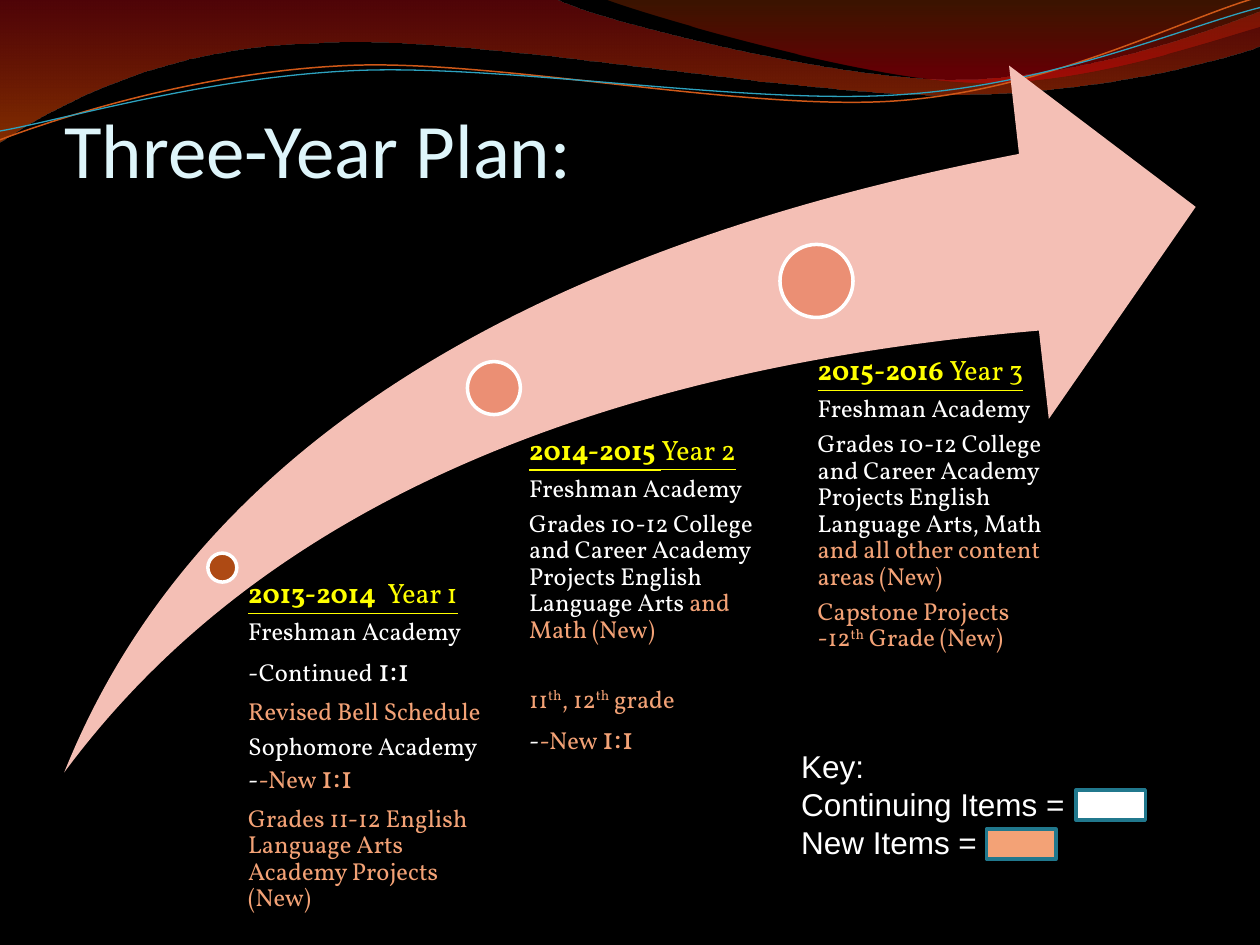
from pptx import Presentation
from pptx.dml.color import RGBColor
from pptx.enum.shapes import MSO_SHAPE as Shape
from pptx.enum.text import MSO_ANCHOR as Anchor, MSO_AUTO_SIZE as AutoSize, PP_ALIGN as Align
from pptx.oxml.ns import qn
from pptx.util import Inches, Pt
from lxml import etree

WHITE, YELLOW, ORANGE = "FFFFFF", "FFFF00", "F3A276"
NEW = {"color": ORANGE}
NEW_SUPER = {"color": ORANGE, "super": True}
NEW_RATIO = [("-New ", NEW), ("1:1", {"color": ORANGE, "size": 18})]

# Each outline: a start point, then Bézier segments (three points) or lines (one point).
LEFT_BAND = [(0, 0), [(4.4, -0.01)],
             [(4.76, 0.17), (6.64, 0.63), (7.58, 0.63)],
             [(8.53, 0.63), (9.58, 0.26), (10, 0.09)], [(10.01, 0.36)],
             [(9.83, 0.44), (8.7, 0.76), (7.46, 0.75)],
             [(6.22, 0.75), (3.82, 0.28), (2.57, 0.34)],
             [(1.29, 0.36), (0.46, 0.83), (-0.01, 1.13)], [(0, 0)]]
RIGHT_BAND = [(4.79, -0.01), [(5.09, 0.11), (6.82, 0.62), (7.69, 0.65)],
              [(8.56, 0.69), (9.61, 0.32), (10, 0.21)], [(10, 0)], [(4.79, -0.01)]]
ORANGE_WAVE = [(0, 1.11), [(0.48, 0.93), (1.58, 0.57), (2.77, 0.52)],
               [(3.95, 0.47), (5.93, 0.89), (7.13, 0.8)],
               [(8.33, 0.71), (9.38, 0.15), (9.98, -0.02)]]
BLUE_WAVE = [(0, 1.04), [(0.47, 0.96), (1.64, 0.61), (2.83, 0.56)],
             [(4.03, 0.51), (5.97, 0.84), (7.17, 0.75)],
             [(8.36, 0.67), (9.41, 0.21), (10, 0.06)]]

# Each year: box, left and top inset, years, label, paragraphs of runs.
YEARS = [
    ((1.85, 4.3, 2.09, 3.07), (0.12, 0.3), "2013-2014  ", "Year 1", [
        [("Freshman Academy", {})],
        [("-Continued ", {}), ("1:1", {"size": 18})],
        [("Revised Bell Schedule", NEW)],
        [("Sophomore Academy -", {}), *NEW_RATIO],
        [("Grades 11-12 English Language Arts Academy Projects (New)", NEW)]]),
    ((3.98, 2.88, 2.15, 3.72), (0.22, 0.58), "2014-2015 ", "Year 2", [
        [("Freshman Academy", {})],
        [("Grades 10-12 College and Career Academy Projects English Language Arts ", {}),
         ("and Math (New)", NEW)],
        [("11", {**NEW, "before": 20}), ("th", NEW_SUPER), (", 12", NEW),
         ("th", NEW_SUPER), (" grade", NEW)],
        [("-", {}), *NEW_RATIO]]),
    ((6.18, 2.25, 2.15, 3.9), (0.31, 0.58), "2015-2016 ", "Year 3", [
        [("Freshman Academy", {})],
        [("Grades 10-12 College and Career Academy Projects English Language Arts, Math ", {}),
         ("and all other content areas (New)", NEW)],
        [("Capstone Projects -12", NEW), ("th", NEW_SUPER), (" Grade (New)", NEW)]]),
]


def rgb(value):
    return RGBColor.from_string(value)


def add_outline(slide, outline):
    """Build straight segments through all points, then bend each triple into a curve."""
    start, *segments = outline
    points = [(Inches(x), Inches(y)) for segment in segments for x, y in segment]
    builder = slide.shapes.build_freeform(*map(Inches, start))
    builder.add_line_segments(points, close=start == segments[-1][-1])
    shape = builder.convert_to_shape()
    shape.shadow.inherit = False
    lines = iter(list(shape._element.iter(qn("a:lnTo"))))
    for segment in segments:
        parts = [next(lines) for _ in segment]
        if len(parts) == 3:
            curve = etree.Element(qn("a:cubicBezTo"))
            parts[0].addprevious(curve)
            for part in parts:
                curve.append(part[0])
                part.getparent().remove(part)
    return shape


def add_band(slide, outline, stops):
    """A closed area with a top-to-bottom gradient of (position, colour, opacity %)."""
    band = add_outline(slide, outline)
    band.line.fill.background()
    band.fill.gradient()
    band.fill.gradient_angle = 270
    for stop, (position, color, _) in zip(band.fill.gradient_stops, stops):
        stop.position = position
        stop.color.rgb = rgb(color)
    colors = band._element.spPr.iter(qn("a:srgbClr"))
    for element, (_, _, opacity) in zip(colors, stops):
        etree.SubElement(element, qn("a:alpha"), val=str(opacity * 1000))


def add_wave(slide, outline, color, width):
    wave = add_outline(slide, outline)
    wave.fill.background()
    wave.line.color.rgb = rgb(color)
    wave.line.width = Pt(width)


def add_shape(slide, kind, box, fill, line=None):
    shape = slide.shapes.add_shape(kind, *map(Inches, box))
    shape.shadow.inherit = False
    shape.fill.solid()
    shape.fill.fore_color.rgb = rgb(fill)
    if line:
        shape.line.color.rgb = rgb(line)
        shape.line.width = Pt(2)
    else:
        shape.line.fill.background()
    return shape


def add_text_frame(slide, box):
    frame = slide.shapes.add_textbox(*map(Inches, box)).text_frame
    frame.word_wrap = True
    return frame


def fill_paragraph(para, runs):
    para.font.name = "Vollkorn"
    para.line_spacing = 0.9
    largest = max(style.get("size", 14) for _, style in runs)
    para.space_after = Pt(round(0.35 * largest, 1))
    para.space_before = Pt(runs[0][1].get("before", 0))
    for text, style in runs:
        span = para.add_run()
        span.text = text
        font = span.font
        font.name = "Vollkorn"
        font.size = Pt(style.get("size", 14))
        font.color.rgb = rgb(style.get("color", WHITE))
        font.bold = style.get("bold", False)
        font.underline = style.get("underline", False)
        if style.get("super"):
            font._element.set("baseline", "30000")


def add_year(slide, box, insets, years, label, items):
    frame = add_text_frame(slide, box)
    frame.margin_left, frame.margin_top = map(Inches, insets)
    frame.margin_right = frame.margin_bottom = 0
    heading = {"size": 16, "color": YELLOW, "underline": True}
    fill_paragraph(frame.paragraphs[0], [(years, {**heading, "bold": True}), (label, heading)])
    for runs in items:
        fill_paragraph(frame.add_paragraph(), runs)


def set_title(slide, text):
    title = slide.shapes.title
    title.left, title.top, title.width, title.height = map(Inches, (0.51, 0.29, 9.08, 1.25))
    frame = title.text_frame
    frame.text = text
    frame.auto_size = AutoSize.NONE
    frame.vertical_anchor = Anchor.BOTTOM
    frame.margin_left = frame.margin_right = frame.margin_bottom = 0
    para = frame.paragraphs[0]
    para.alignment = Align.LEFT
    para.font.name = "Calibri"
    para.font.size = Pt(44)
    para.font.color.rgb = rgb("DEF5FA")


def add_key(slide):
    frame = add_text_frame(slide, (6.26, 5.88, 3.54, 1.01))
    frame.text = "Key:\nContinuing Items =\nNew Items ="
    for para in frame.paragraphs:
        para.font.name = "Arial"
        para.font.size = Pt(18)
        para.font.color.rgb = rgb(WHITE)
    for left, top, color in ((8.54, 6.27, WHITE), (7.83, 6.58, ORANGE)):
        add_shape(slide, Shape.RECTANGLE, (left, top, 0.55, 0.24), color, "21788D")


def main():
    deck = Presentation()
    deck.slide_width, deck.slide_height = Inches(10), Inches(7.5)
    slide = deck.slides.add_slide(deck.slide_layouts[5])
    slide.background.fill.solid()
    slide.background.fill.fore_color.rgb = rgb("000000")
    add_band(slide, LEFT_BAND, [(0, "AF0911", 45), (1, "EE5300", 55)])
    add_band(slide, RIGHT_BAND, [(0, "C24400", 30), (0.8, "DC000B", 45)])
    add_wave(slide, ORANGE_WAVE, "CF5818", 0.85)
    add_wave(slide, BLUE_WAVE, "2DA2BF", 0.75)
    set_title(slide, "Three-Year Plan:")
    arrow = add_shape(slide, Shape.SWOOSH_ARROW, (0.51, 0.52, 8.98, 5.61), "F4BFB5")
    arrow.adjustments[0] = arrow.adjustments[1] = 0.25
    for left, top, size, color in ((1.65, 4.39, 0.23, "AE4A14"), (3.71, 2.87, 0.42, "EB8F74"),
                                   (6.19, 1.94, 0.58, "EB8F74")):
        add_shape(slide, Shape.OVAL, (left, top, size, size), color, WHITE)
    for year in YEARS:
        add_year(slide, *year)
    add_key(slide)
    deck.save("out.pptx")


if __name__ == "__main__":
    main()
